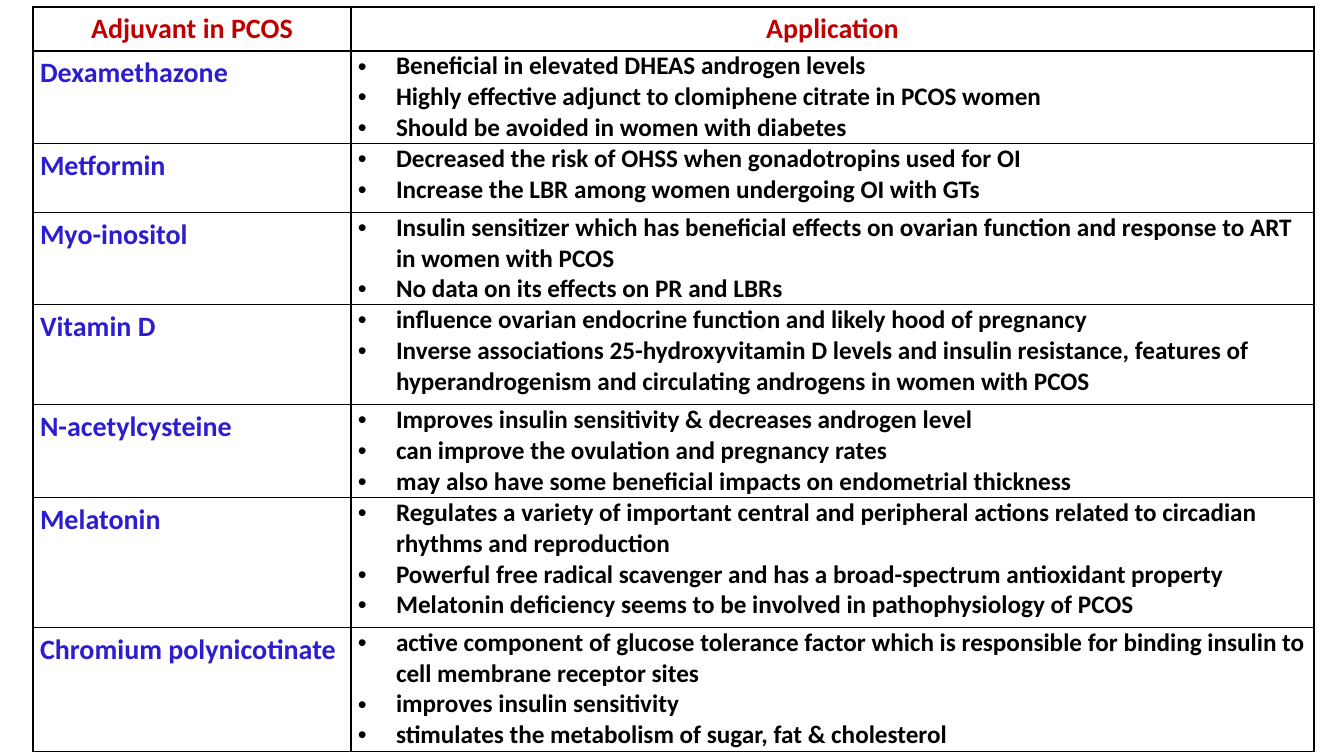
import pptx
import pptx.util
import pptx.dml.color
import pptx.enum.text
import pptx.oxml
import pptx.oxml.ns

PX = 914400 / 100.8
COLORS = {"header": "C00000", "adjuvant": "2C1DD0", "text": "000000", "border": "000000"}
HEADINGS = ["Adjuvant in PCOS", "Application"]
COLUMN_WIDTHS = [318, 963]
ROW_HEIGHTS = [44, 92, 69, 92, 100, 93, 130, 124]
ADJUVANTS = [
    ("Dexamethazone", [
        "Beneficial in elevated DHEAS androgen levels",
        "Highly effective adjunct to clomiphene citrate in PCOS women",
        "Should be avoided in women with diabetes"]),
    ("Metformin", [
        "Decreased the risk of OHSS when gonadotropins used for OI",
        "Increase the LBR among women undergoing OI with GTs"]),
    ("Myo-inositol", [
        "Insulin sensitizer which has beneficial effects on ovarian function "
        "and response to ART in women with PCOS",
        "No data on its effects on PR and LBRs"]),
    ("Vitamin D", [
        "influence ovarian endocrine function and likely hood of pregnancy",
        "Inverse associations 25-hydroxyvitamin D levels and insulin resistance, "
        "features of hyperandrogenism and circulating androgens in women with PCOS"]),
    ("N-acetylcysteine", [
        "Improves insulin sensitivity & decreases androgen level",
        "can improve the ovulation and pregnancy rates",
        "may also have some beneficial impacts on endometrial thickness"]),
    ("Melatonin", [
        "Regulates a variety of important central and peripheral actions related "
        "to circadian rhythms and reproduction",
        "Powerful free radical scavenger and has a broad-spectrum antioxidant property",
        "Melatonin deﬁciency seems to be involved in pathophysiology of PCOS"]),
    ("Chromium polynicotinate", [
        "active component of glucose tolerance factor which is responsible for "
        "binding insulin to cell membrane receptor sites",
        "improves insulin sensitivity",
        "stimulates the metabolism of sugar, fat & cholesterol"]),
]


def px(n):
    """Turn slide pixels into EMU."""
    return pptx.util.Emu(round(n * PX))


def add_run(p, text, size, color):
    r = p.add_run()
    r.text = text
    r.font.name = "Calibri"
    r.font.size = pptx.util.Pt(size)
    r.font.bold = True
    r.font.color.rgb = pptx.dml.color.RGBColor.from_string(COLORS[color])


prs = pptx.Presentation()
prs.slide_width, prs.slide_height = px(1344), px(756)
s = prs.slides.add_slide(prs.slide_layouts[6])

table = s.shapes.add_table(len(ROW_HEIGHTS), len(COLUMN_WIDTHS), px(33), px(7),
                           px(sum(COLUMN_WIDTHS)), px(sum(ROW_HEIGHTS))).table
table.first_row = table.horz_banding = False
for column, width in zip(table.columns, COLUMN_WIDTHS):
    column.width = px(width)
for row, height in zip(table.rows, ROW_HEIGHTS):
    row.height = px(height)

for cell in table.iter_cells():
    cell.margin_left = cell.margin_right = px(7)
    cell.margin_top = cell.margin_bottom = 0
    tcPr = cell._tc.get_or_add_tcPr()
    for side in ("lnL", "lnR", "lnT", "lnB"):
        tcPr.append(pptx.oxml.parse_xml(
            f'<a:{side} {pptx.oxml.ns.nsdecls("a")} w="12700"><a:solidFill>'
            f'<a:srgbClr val="{COLORS["border"]}"/></a:solidFill></a:{side}>'))
    cell.fill.background()

for column, heading in enumerate(HEADINGS):
    p = table.cell(0, column).text_frame.paragraphs[0]
    p.alignment = pptx.enum.text.PP_ALIGN.CENTER
    p.line_spacing = 1.15
    add_run(p, heading, 20, "header")

for row, (adjuvant, applications) in enumerate(ADJUVANTS, 1):
    p = table.cell(row, 0).text_frame.paragraphs[0]
    p.line_spacing = 1.15
    add_run(p, adjuvant, 20, "adjuvant")

    tf = table.cell(row, 1).text_frame
    for i, application in enumerate(applications):
        p = tf.add_paragraph() if i else tf.paragraphs[0]
        pPr = p._p.get_or_add_pPr()
        pPr.set("marL", str(px(38)))
        pPr.set("indent", str(px(-38)))
        for bullet in ('buFont {} typeface="Arial"', 'buChar {} char="•"'):
            pPr.append(pptx.oxml.parse_xml(
                f'<a:{bullet.format(pptx.oxml.ns.nsdecls("a"))}/>'))
        add_run(p, application, 18, "text")

prs.save("out.pptx")
